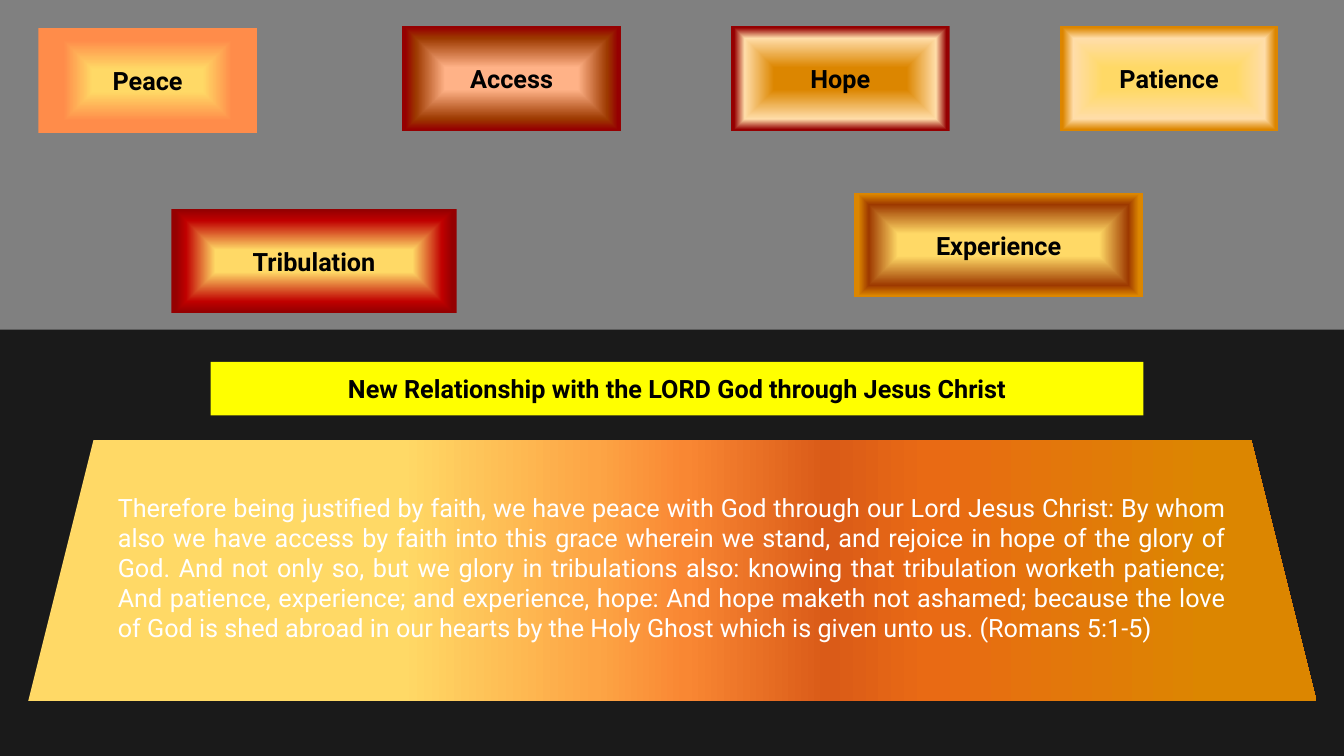
from pptx import Presentation
from pptx.dml.color import RGBColor as Rgb
from pptx.enum.shapes import MSO_SHAPE as Form
from pptx.enum.text import MSO_ANCHOR as Anchor, MSO_AUTO_SIZE as Auto, PP_ALIGN as Align
from pptx.oxml import parse_xml
from pptx.oxml.ns import nsdecls
from pptx.util import Inches, Pt

theme = dict(
    font="Roboto", size=Pt(18), ink="000000", pale="FFFFFF",
    wall="808080", floor="1A1A1A", label="FFFF00",
    gold="FFD966", peach="FF8C4A", blush="FFB287", cream="FFDDA9",
    amber="DC8600", rust="9D3900", red="C00000", wine="950001",
    apricot="FDA545", orange="F98733", ember="DA5B18", flame="E96A14",
)

deck = Presentation()
deck.slide_width, deck.slide_height = Inches(13.33), Inches(7.5)
slide = deck.slides.add_slide(deck.slide_layouts[5])
shapes = slide.shapes
slide.background.fill.solid()
slide.background.fill.fore_color.rgb = Rgb.from_string(theme["wall"])


def share(left, top, width, height):
    wide, high = deck.slide_width / 100, deck.slide_height / 100
    return [int(n) for n in (left * wide, top * high, width * wide, height * high)]


def write(shape, text, align, ink, bold):
    frame = shape.text_frame
    frame.text = text
    frame.word_wrap = True
    frame.auto_size = Auto.NONE
    para = frame.paragraphs[0]
    para.alignment = align
    font = para.runs[0].font
    font.name, font.size, font.bold = theme["font"], theme["size"], bold
    font.color.rgb = Rgb.from_string(theme[ink])


floor = shapes.add_shape(Form.RECTANGLE, *share(0, 43.6, 100, 56.4))
floor.fill.solid()
floor.fill.fore_color.rgb = Rgb.from_string(theme["floor"])

slab = shapes.add_shape(Form.TRAPEZOID, *share(2.1, 58.2, 95.85, 34.53))
slab.adjustments[0] = 0.25

linear = '<a:lin ang="0" scaled="0"/>'
boxed = '<a:path path="rect"><a:fillToRect l="50000" t="50000" r="50000" b="50000"/></a:path>'
blends = [(slab, linear, [(29, "gold"), (44, "apricot"), (51, "orange"),
                          (62, "ember"), (70, "flame"), (92, "amber")])]

first, pitch, small, tall = 29.93, 24.46, 16.28, 13.87
cards = [
    ("Peace", 2.85, 3.73, small, "gold", "peach", "peach"),
    ("Tribulation", 12.75, 27.6, 21.23, "gold", "red", "wine"),
    ("Access", first, 3.47, small, "blush", "rust", "wine"),
    ("Hope", first + pitch, 3.47, small, "amber", "cream", "wine"),
    ("Patience", first + 2 * pitch, 3.47, small, "gold", "cream", "amber"),
    ("Experience", 63.54, 25.47, 21.53, "gold", "rust", "amber"),
]
for name, left, top, width, core, ring, edge in cards:
    card = shapes.add_shape(Form.RECTANGLE, *share(left, top, width, tall))
    write(card, name, Align.CENTER, "ink", True)
    card.text_frame.vertical_anchor = Anchor.MIDDLE
    blends.append((card, boxed, [(21, core), (77, ring), (97, edge)]))

for shape, kind, stops in blends:
    marks = "".join(
        f'<a:gs pos="{at * 1000}"><a:srgbClr val="{theme[tone]}"/></a:gs>' for at, tone in stops)
    blend = parse_xml(
        f'<a:gradFill {nsdecls("a")} rotWithShape="1"><a:gsLst>{marks}</a:gsLst>{kind}</a:gradFill>')
    shape.element.spPr.insert(2, blend)

for shape in [floor] + [blend[0] for blend in blends]:
    shape.line.fill.background()
    shape.shadow.inherit = False

verse = shapes.add_textbox(*share(8.03, 64.4, 83.95, 21.6))
write(verse, "Therefore being justified by faith, we have peace with God through our Lord Jesus Christ: "
      "By whom also we have access by faith into this grace wherein we stand, and rejoice in hope of "
      "the glory of God. And not only so, but we glory in tribulations also: knowing that tribulation "
      "worketh patience; And patience, experience; and experience, hope: And hope maketh not ashamed; "
      "because the love of God is shed abroad in our hearts by the Holy Ghost which is given unto us. "
      "(Romans 5:1-5)", Align.JUSTIFY, "pale", False)

title = shapes.title
title.left, title.top, title.width, title.height = share(15.68, 47.87, 69.39, 7.07)
title.element.spPr.insert(1, parse_xml(
    f'<a:prstGeom {nsdecls("a")} prst="roundRect"><a:avLst/></a:prstGeom>'))
title.fill.solid()
title.fill.fore_color.rgb = Rgb.from_string(theme["label"])
write(title, "New Relationship with the LORD God through Jesus Christ", Align.CENTER, "ink", True)
title.text_frame.vertical_anchor = Anchor.MIDDLE
verse.element.addnext(title.element)

deck.save("out.pptx")
